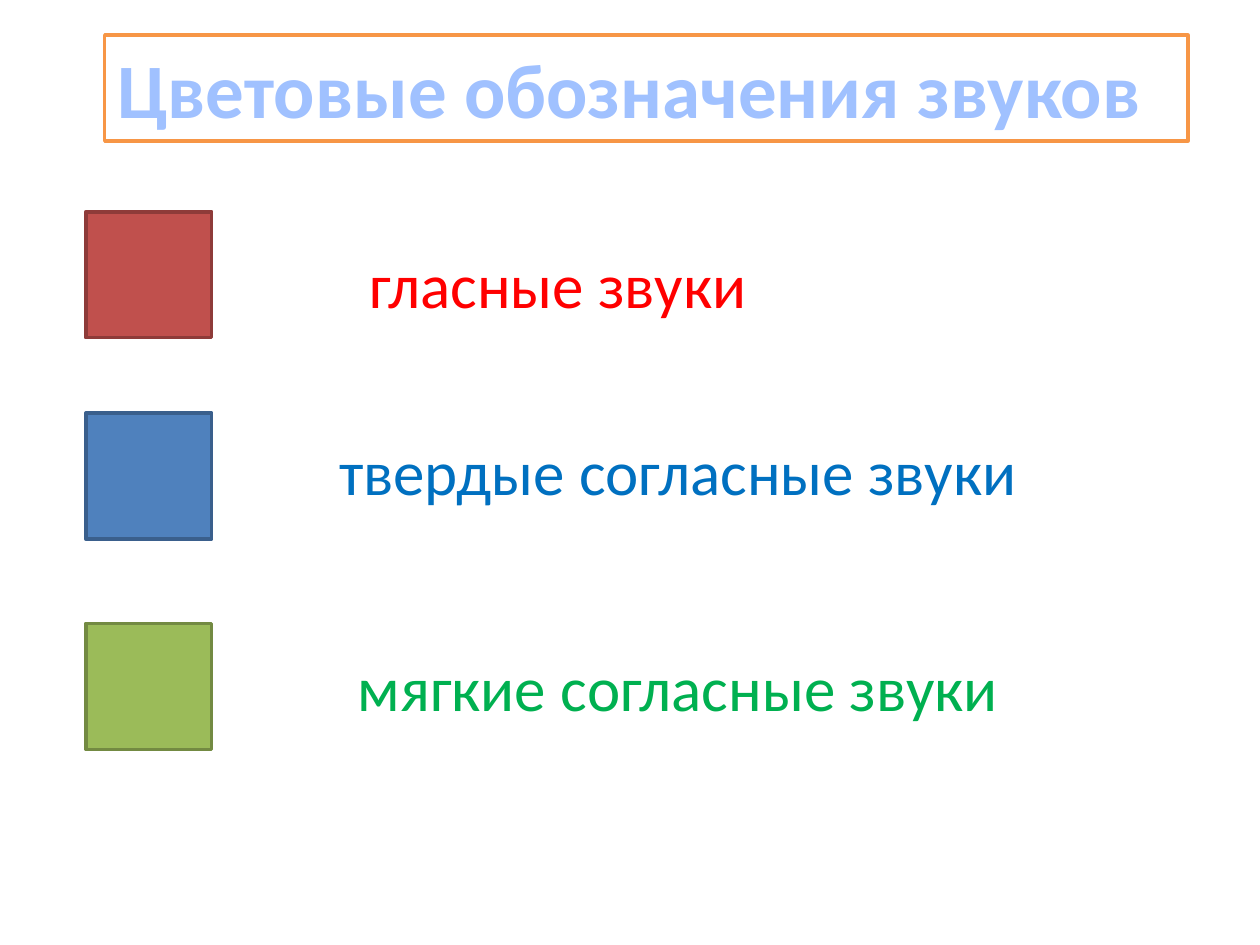
"""Build a slide that explains the colour code of speech sounds."""
from dataclasses import dataclass

import pptx
import pptx.dml.color
import pptx.enum.shapes
import pptx.enum.text
import pptx.util
from pptx.dml.color import RGBColor
from pptx.util import Cm

WHITE = RGBColor(0xFF, 0xFF, 0xFF)
ORANGE = RGBColor(0xF7, 0x96, 0x46)
PALE_BLUE = RGBColor(0xA0, 0xC1, 0xFF)
RED = RGBColor(0xFF, 0x00, 0x00)
BLUE = RGBColor(0x00, 0x70, 0xC0)
GREEN = RGBColor(0x00, 0xB0, 0x50)
BRICK = RGBColor(0xC0, 0x50, 0x4D)
BRICK_EDGE = RGBColor(0x8E, 0x3B, 0x39)
STEEL = RGBColor(0x4F, 0x81, 0xBD)
STEEL_EDGE = RGBColor(0x3A, 0x5F, 0x8C)
OLIVE = RGBColor(0x9B, 0xBB, 0x59)
OLIVE_EDGE = RGBColor(0x73, 0x8A, 0x42)


@dataclass
class Sound:
    text: str
    color: RGBColor
    left: float
    top: float
    width: float
    square_top: float
    fill: RGBColor
    edge: RGBColor


SOUNDS = [
    Sound("гласные звуки", RED, 7.19, 4.83, 8.2, 4.27, BRICK, BRICK_EDGE),
    Sound(" твердые согласные звуки", BLUE, 6.3, 8.59, 14.88, 8.33, STEEL, STEEL_EDGE),
    Sound("мягкие согласные звуки", GREEN, 6.96, 12.95, 13.56, 12.57, OLIVE, OLIVE_EDGE),
]


def write(sp, text: str, *, size: float, color: RGBColor, bold: bool = False) -> None:
    tf = sp.text_frame
    tf.word_wrap = True
    tf.auto_size = pptx.enum.text.MSO_AUTO_SIZE.NONE
    tf.vertical_anchor = pptx.enum.text.MSO_ANCHOR.TOP
    p = tf.paragraphs[0]
    p.alignment = pptx.enum.text.PP_ALIGN.LEFT
    r = p.add_run()
    r.text = text
    r.font.name = "Calibri"
    r.font.size = pptx.util.Pt(size)
    r.font.bold = bold
    r.font.color.rgb = color


def paint(sp, fill: RGBColor, edge: RGBColor) -> None:
    sp.fill.solid()
    sp.fill.fore_color.rgb = fill
    sp.line.color.rgb = edge
    sp.line.width = pptx.util.Pt(2)


def add_title(s, text: str) -> None:
    sp = s.shapes.title
    sp.left, sp.top, sp.width, sp.height = Cm(2.11), Cm(0.71), Cm(21.84), Cm(2.13)
    paint(sp, WHITE, ORANGE)
    write(sp, text, size=44, color=PALE_BLUE, bold=True)


def add_label(s, sound: Sound) -> None:
    sp = s.shapes.add_textbox(Cm(sound.left), Cm(sound.top), Cm(sound.width), Cm(1.8))
    write(sp, sound.text, size=36, color=sound.color)


def add_square(s, sound: Sound) -> None:
    side = Cm(2.54)
    sp = s.shapes.add_shape(
        pptx.enum.shapes.MSO_SHAPE.RECTANGLE, Cm(1.73), Cm(sound.square_top), side, side
    )
    sp.shadow.inherit = False
    paint(sp, sound.fill, sound.edge)


def main() -> None:
    prs = pptx.Presentation()
    prs.slide_width, prs.slide_height = Cm(25.4), Cm(19.05)
    s = prs.slides.add_slide(prs.slide_layouts.get_by_name("Title Only"))
    add_title(s, "Цветовые обозначения звуков")
    for sound in SOUNDS:
        add_label(s, sound)
    for sound in SOUNDS:
        add_square(s, sound)
    prs.save("out.pptx")


if __name__ == "__main__":
    main()
